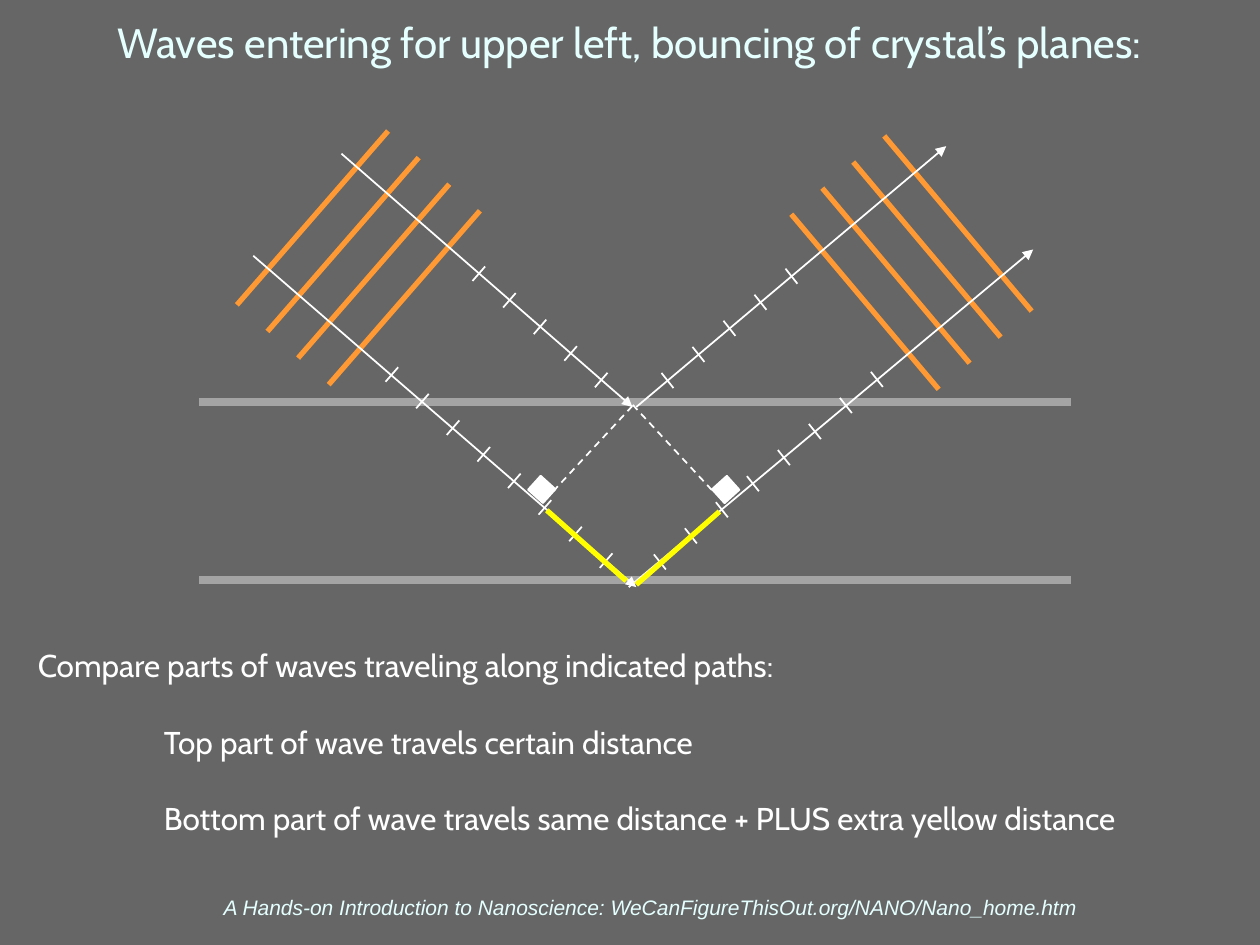
from pptx import Presentation
from pptx import util as u
from pptx.dml import color
from pptx.enum import dml, shapes, text
from pptx.oxml import ns
from lxml import etree

deck = Presentation()
deck.slide_width, deck.slide_height = u.Inches(10), u.Inches(7.5)
COL, ROW = deck.slide_width / 100, deck.slide_height / 75
WHITE, ICE, GREY = "FFFFFF", "E5FFFF", "A4A4A4"
ORANGE, YELLOW = "FF9933", "FFFF00"


def rgb(code):
    return color.RGBColor.from_string(code)


def across(n):
    return u.Emu(round(n * COL))


def down(n):
    return u.Emu(round(n * ROW))


def add(a, b):
    return a[0] + b[0], a[1] + b[1]


def put_text(slide, box, lines, font="Cabin", size=18, ink=WHITE, italic=False,
             align=text.PP_ALIGN.LEFT, anchor=text.MSO_ANCHOR.TOP, gap=0, indent=0):
    left, top, width, height = box
    frame = slide.shapes.add_textbox(
        across(left), down(top), across(width), down(height)).text_frame
    frame.word_wrap = True
    frame.vertical_anchor = anchor
    frame.margin_left = frame.margin_right = across(0.5)
    frame.margin_top = frame.margin_bottom = down(0.5)
    for i, line in enumerate(lines):
        para = frame.paragraphs[0] if i == 0 else frame.add_paragraph()
        para.alignment = align
        if i:
            para.space_before = u.Pt(gap)
            para._p.get_or_add_pPr().set("marL", str(across(indent)))
        run = para.add_run()
        run.text = line
        run.font.name, run.font.size = font, u.Pt(size)
        run.font.italic = italic
        run.font.color.rgb = rgb(ink)


def put_line(slide, start, end, ink=WHITE, width=1, arrow=False, dash=False):
    line = slide.shapes.add_connector(
        shapes.MSO_CONNECTOR.STRAIGHT,
        across(start[0]), down(start[1]), across(end[0]), down(end[1]))
    line.line.color.rgb = rgb(ink)
    line.line.width = u.Pt(width)
    if dash:
        line.line.dash_style = dml.MSO_LINE.DASH
    if arrow:
        etree.SubElement(line.line._get_or_add_ln(), ns.qn("a:tailEnd"), type="triangle")
    etree.SubElement(line._element.spPr, ns.qn("a:effectLst"))


def put_comb(slide, start, run, count, step, **style):
    for i in range(count):
        tip = add(start, (i * step[0], i * step[1]))
        put_line(slide, tip, add(tip, run), **style)


def put_square(slide, spot, turn):
    mark = slide.shapes.add_shape(
        shapes.MSO_SHAPE.RECTANGLE, across(spot[0]), down(spot[1]), across(1.6), down(1.5))
    mark.rotation = turn
    mark.shadow.inherit = False
    mark.fill.solid()
    mark.fill.fore_color.rgb = rgb(WHITE)
    mark.line.color.rgb = rgb(WHITE)
    mark.line.width = u.Pt(1)


def put_planes(slide, box):
    left, top, width, height = box
    for y in (top, top + height):
        put_line(slide, (left, y), (left + width, y), GREY, 4.5)


def put_wave(slide, box, step, front, rays, tick, marks, corner, turn, normal, extra):
    spot = box[:2]
    put_comb(slide, add(spot, front[0]), front[1], 4, step, ink=ORANGE, width=3)
    for start, end in rays:
        put_line(slide, add(spot, start), add(spot, end), arrow=True)
    for start, count in zip(marks, (5, 8)):
        put_comb(slide, add(spot, start), tick, count, step)
    put_square(slide, add(spot, corner), turn)
    put_line(slide, *(add(spot, p) for p in normal), dash=True)
    put_line(slide, *(add(spot, p) for p in extra), ink=YELLOW, width=3)


def main():
    slide = deck.slides.add_slide(deck.slide_layouts[6])
    slide.background.fill.solid()
    slide.background.fill.fore_color.rgb = rgb("666666")
    put_text(slide, (3.3, 0.8, 93.3, 9.2),
             ["Waves entering for upper left, bouncing of crystal’s planes:"],
             size=24, ink=ICE, align=text.PP_ALIGN.CENTER)
    put_planes(slide, (15.8, 31.9, 69.2, 14.1))
    put_wave(slide, (49.9, 10.8, 32.1, 35.8), step=(2.46, -2.07),
             front=((12.9, 6.2), (11.7, 13.9)),
             rays=(((0.6, 21.5), (25.2, 0.8)), ((0, 35.8), (32.1, 9))),
             tick=(0.95, 1.2), marks=((2.6, 18.8), (2, 33.2)),
             corner=(6.9, 27.3), turn=317.9,
             normal=((6.6, 28.1), (0.2, 21.2)), extra=((0.6, 35.6), (7.2, 29.8)))
    put_wave(slide, (18.8, 10.4, 31.7, 36.2), step=(2.43, 2.11),
             front=((0, 13.8), (12, -13.8)),
             rays=(((1.3, 9.9), (31.7, 36.2)), ((8.3, 1.8), (31.4, 21.9))),
             tick=(1, -1.15), marks=((18.7, 11.9), (11.8, 19.9)),
             corner=(23.4, 27.7), turn=42.1,
             normal=((25.1, 28.6), (31.5, 21.7)), extra=((30.9, 35.7), (24.6, 30.1)))
    put_text(slide, (2.5, 50.8, 93.3, 18.3),
             ["Compare parts of waves traveling along indicated paths:",
              "Top part of wave travels certain distance",
              "Bottom part of wave travels same distance + PLUS extra yellow distance"],
             gap=22, indent=10)
    put_text(slide, (5, 70.6, 93.3, 2.9),
             ["A Hands-on Introduction to Nanoscience: WeCanFigureThisOut.org/NANO/Nano_home.htm"],
             font="Arial", size=12, ink=ICE, italic=True,
             align=text.PP_ALIGN.CENTER, anchor=text.MSO_ANCHOR.BOTTOM)
    deck.save("out.pptx")


if __name__ == "__main__":
    main()
